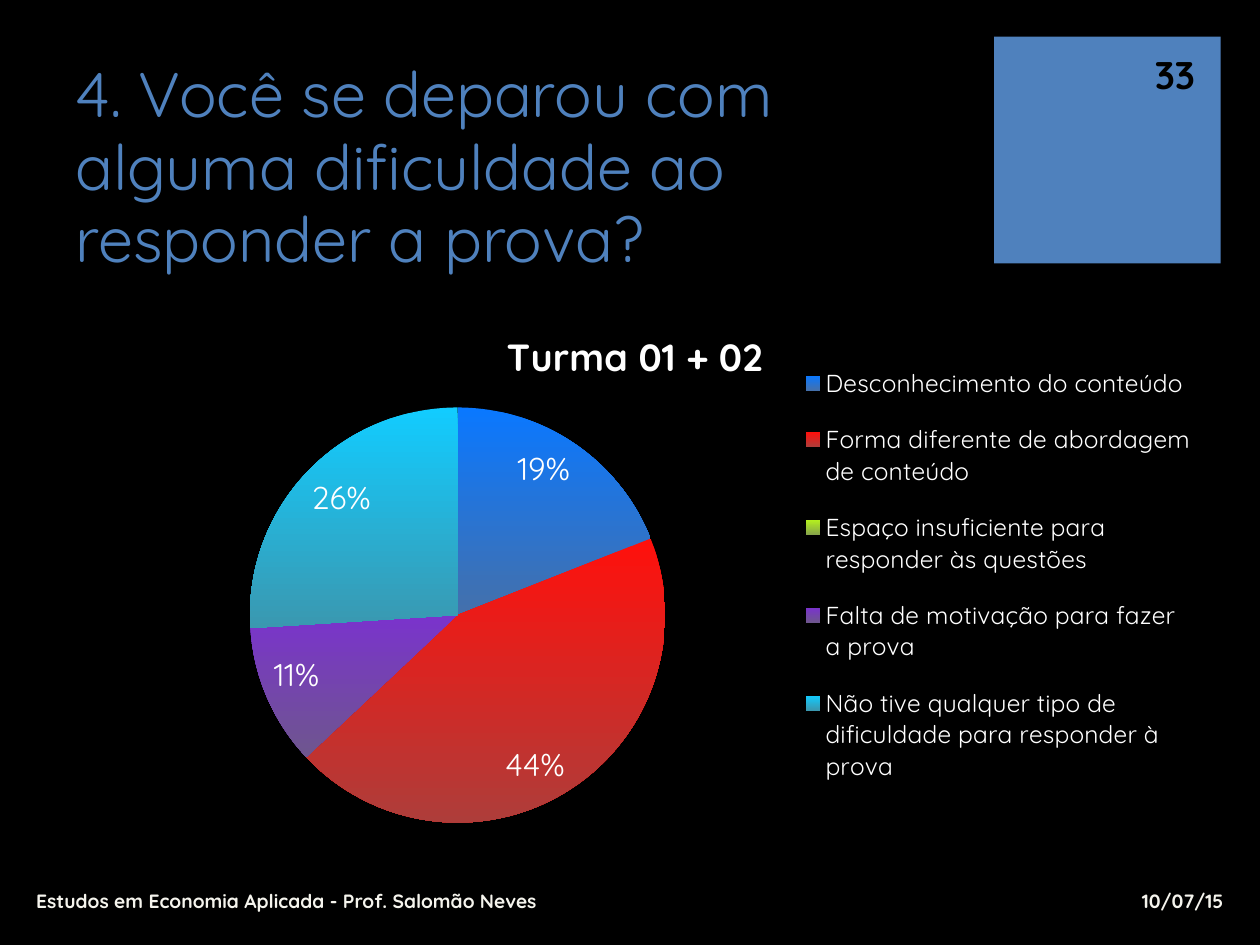
from lxml.etree import SubElement
from pptx import Presentation
from pptx.chart.data import CategoryChartData
from pptx.dml.color import RGBColor
from pptx.enum.chart import XL_CHART_TYPE as ChartType, XL_LABEL_POSITION as LabelPos, XL_LEGEND_POSITION as LegendPos
from pptx.enum.shapes import MSO_SHAPE as Shape
from pptx.enum.text import MSO_ANCHOR as Anchor, PP_ALIGN as Align
from pptx.oxml import parse_xml
from pptx.oxml.ns import nsdecls, qn
from pptx.util import Cm, Pt

FONT = "Quicksand"
BLUE, WHITE, BLACK, CREAM = "4F81BD", "FFFFFF", "000000", "F5F4ED"
ANSWERS = [
    ("Desconhecimento do conteúdo", 19, "0A78FF", "4470AB"),
    ("Forma diferente de abordagem de conteúdo", 44, "FF100C", "AE3D3A"),
    ("Espaço insuficiente para responder às questões", 0, "B4F01E", "86A44A"),
    ("Falta de motivação para fazer a prova", 11, "7A33CC", "6E568E"),
    ("Não tive qualquer tipo de dificuldade para responder à prova", 26, "12CCFF", "3A98B0"),
]


def rgb(color):
    return RGBColor.from_string(color)


def set_font(font, size, color, bold=False):
    font.name = FONT
    font.size = Pt(size)
    font.bold = bold
    font.color.rgb = rgb(color)


def add_text(s, box, text, size, color, bold=False, align=Align.LEFT, anchor=Anchor.MIDDLE):
    tf = s.shapes.add_textbox(*map(Cm, box)).text_frame
    tf.word_wrap = True
    tf.vertical_anchor = anchor
    p = tf.paragraphs[0]
    p.text = text
    p.alignment = align
    set_font(p.font, size, color, bold)
    return p


def add_number_tile(s, x, y, side):
    sp = s.shapes.add_shape(Shape.RECTANGLE, Cm(x), Cm(y), Cm(side), Cm(side))
    sp.shadow.inherit = False
    sp.fill.solid()
    sp.fill.fore_color.rgb = rgb(BLUE)
    sp.line.fill.background()
    add_text(s, (x + 2.9, y + 0.25, 1.4, 1.02), "33", 22, BLACK, True, Align.RIGHT)


def add_heading(s, x, y, w, h):
    p = add_text(s, (x, y, w, h), "4. Você se deparou com alguma dificuldade ao responder a prova?",
                 36, BLUE, anchor=Anchor.BOTTOM)
    p.line_spacing = 0.96


def add_footer(s, x, y, w, h):
    date_w = 4.88
    add_text(s, (x, y, 16.69, h), "Estudos em Economia Aplicada - Prof. Salomão Neves", 11, CREAM, True)
    add_text(s, (x + w - date_w, y, date_w, h), "10/07/15", 11, CREAM, True, Align.RIGHT)


def set_layout(parent, after, x, y, w, h, inner=False):
    old = parent.find(qn("c:layout"))
    if old is not None:
        parent.remove(old)
    layout = parse_xml(f'<c:layout {nsdecls("c")}><c:manualLayout/></c:layout>')
    values = [("layoutTarget", "inner")] if inner else []
    values += [("xMode", "edge"), ("yMode", "edge"), ("x", x), ("y", y), ("w", w), ("h", h)]
    for tag, value in values:
        SubElement(layout[0], qn(f"c:{tag}")).set("val", str(value))
    if after is None:
        parent.insert(0, layout)
    else:
        after.addnext(layout)


def hide_label(labels, idx):
    label = parse_xml(f'<c:dLbl {nsdecls("c")}><c:idx val="{idx}"/><c:delete val="1"/></c:dLbl>')
    labels._element.insert(0, label)


def add_answer_chart(s, x, y, w, h):
    data = CategoryChartData()
    data.categories = [answer[0] for answer in ANSWERS]
    data.add_series("Turma 01 + 02", [answer[1] for answer in ANSWERS])
    chart = s.shapes.add_chart(ChartType.PIE, Cm(x), Cm(y), Cm(w), Cm(h), data).chart
    set_font(chart.font, 18, WHITE)

    chart.has_title = True
    p = chart.chart_title.text_frame.paragraphs[0]
    p.text = "Turma 01 + 02"
    set_font(p.font, 21.6, WHITE, True)
    chart.chart_title.include_in_layout = False

    chart.has_legend = True
    legend = chart.legend
    legend.position = LegendPos.RIGHT
    legend.include_in_layout = False
    set_font(legend.font, 14, WHITE)
    set_layout(legend._element, legend._element.find(qn("c:legendPos")), 0.65, 0.07, 0.34, 0.86)

    plot = chart.plots[0]
    plot.vary_by_categories = True
    set_layout(plot._element.getparent(), None, 0.16, 0.19, 0.37, 0.77, inner=True)
    series = plot.series[0]
    labels = series.data_labels
    labels.show_percentage = True
    labels.show_value = False
    labels.number_format = "0%"
    labels.number_format_is_linked = False
    labels.position = LabelPos.INSIDE_END
    set_font(labels.font, 18, WHITE)
    for i, (_, value, top, bottom) in enumerate(ANSWERS):
        fmt = series.points[i].format
        fmt.line.fill.background()
        fmt.fill.gradient()
        fmt.fill.gradient_angle = 270
        for stop, color in zip(fmt.fill.gradient_stops, (top, bottom)):
            stop.color.rgb = rgb(color)
        if value == 0:
            hide_label(labels, i)


def main():
    prs = Presentation()
    prs.slide_width, prs.slide_height = Cm(25.4), Cm(19.05)
    s = prs.slides.add_slide(prs.slide_layouts[6])
    s.background.fill.solid()
    s.background.fill.fore_color.rgb = rgb(BLACK)
    add_number_tile(s, 20.04, 0.74, 4.57)
    add_heading(s, 1.27, 2.54, 18.08, 3.18)
    add_footer(s, 0.48, 17.65, 24.44, 1.02)
    add_answer_chart(s, 1.27, 6.15, 23.06, 10.87)
    prs.save("out.pptx")


if __name__ == "__main__":
    main()
